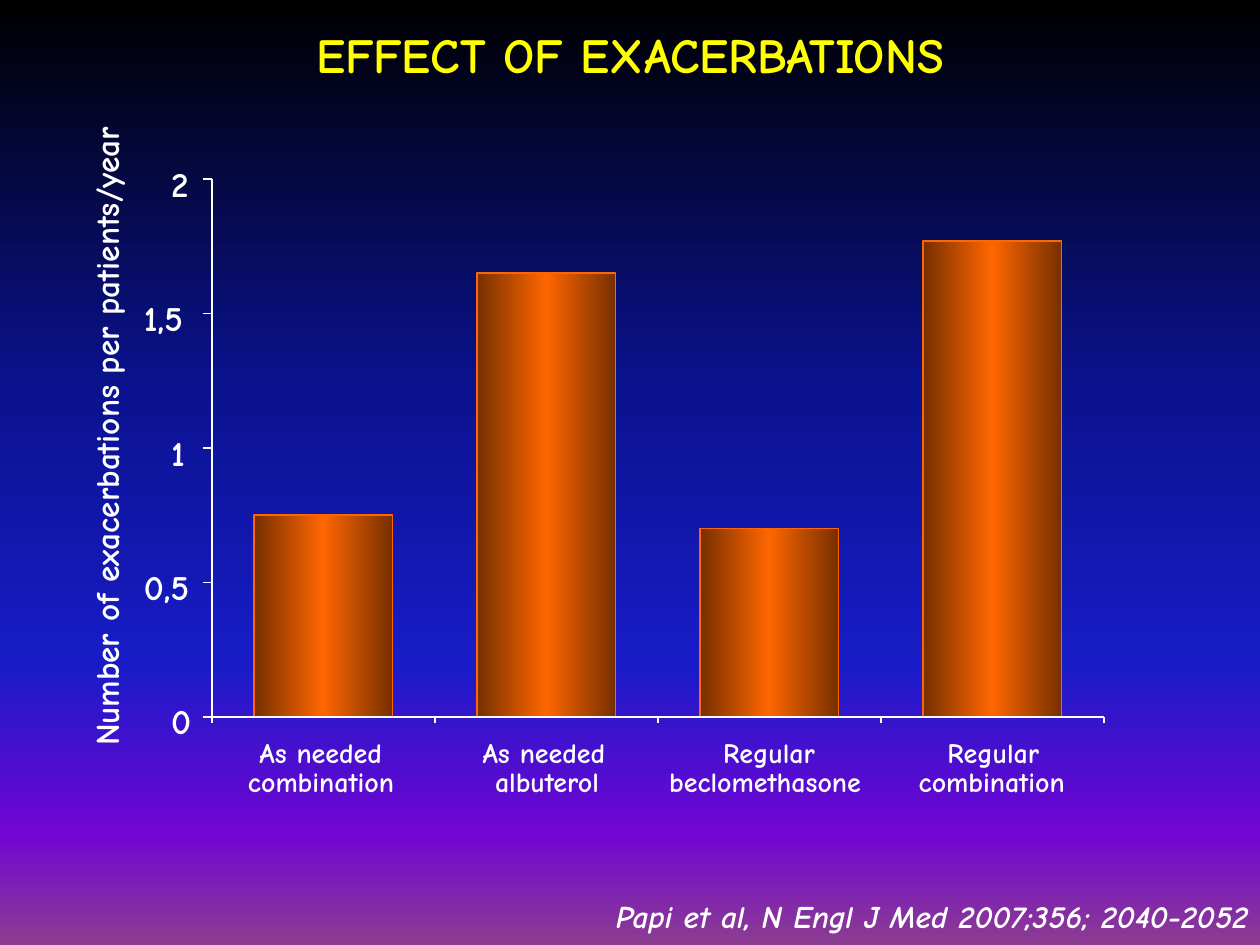
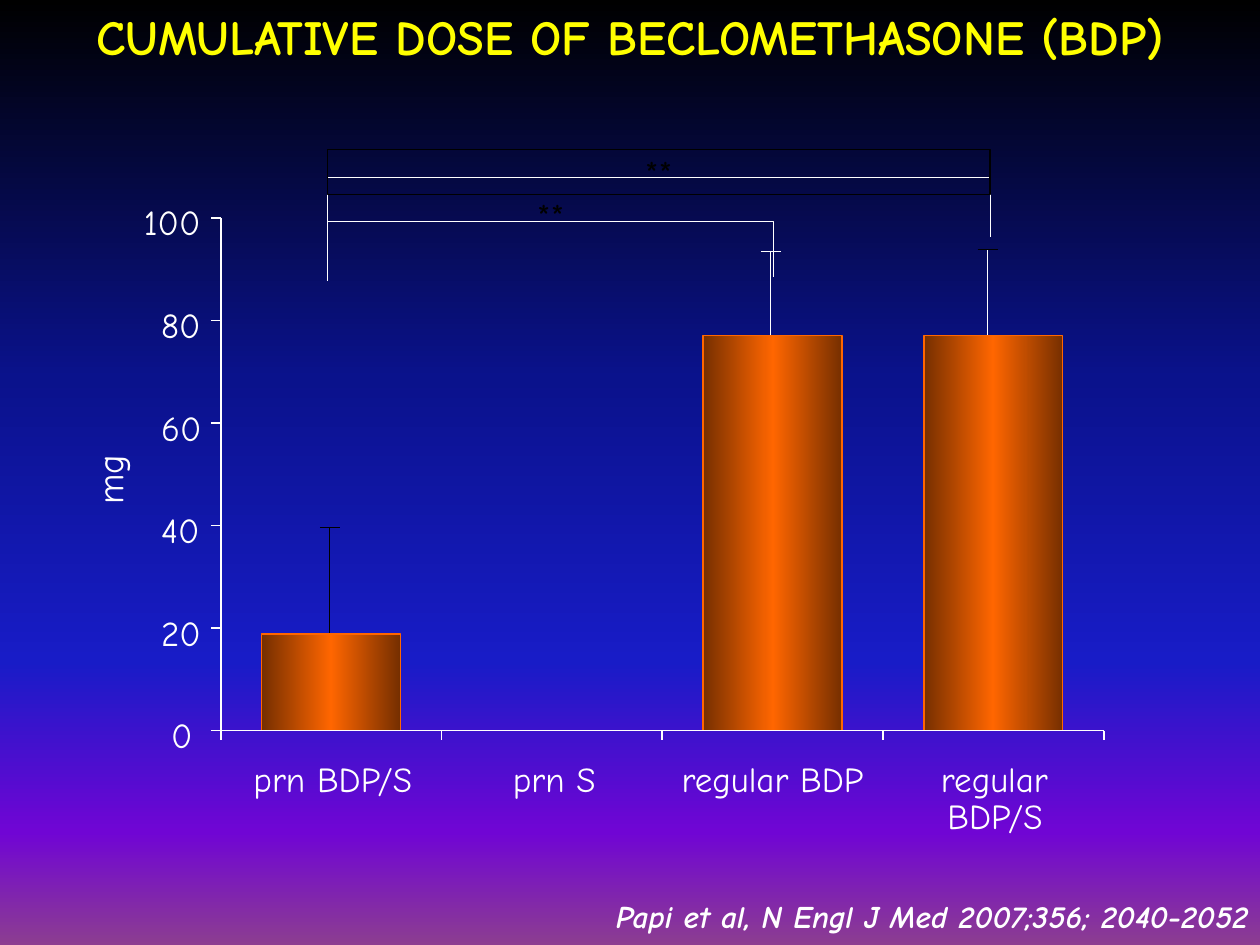
from dataclasses import dataclass

from pptx import Presentation
from pptx.dml.color import RGBColor
from pptx.enum.shapes import MSO_CONNECTOR as Connector, MSO_SHAPE as Shape
from pptx.enum.text import MSO_ANCHOR as Anchor, PP_ALIGN as Align
from pptx.oxml import parse_xml
from pptx.oxml.ns import nsdecls, qn
from pptx.oxml.xmlchemy import OxmlElement
from pptx.util import Cm, Pt


@dataclass(frozen=True)
class Theme:
    font: str = "Comic Neue"
    title: str = "FFFF00"
    text: str = "FFFFFF"
    dark: str = "000000"
    bar: str = "FF6600"
    background: tuple = ((0, "000000"), (40, "0A128C"), (70, "181CC7"),
                         (88, "7005D4"), (100, "8C3D91"))
    bar_gradient: tuple = ((0, "762F00"), (50, "FF6600"), (100, "762F00"))
    title_size: float = 28
    citation_size: float = 18
    label_size: float = 20
    small_label_size: float = 16
    axis_width: float = 0.88
    thin_width: float = 0.5
    box_width: float = 0.75


@dataclass(frozen=True)
class Box:
    left: float
    top: float
    width: float
    height: float

    def lengths(self) -> tuple:
        return Cm(self.left), Cm(self.top), Cm(self.width), Cm(self.height)


@dataclass(frozen=True)
class TextStyle:
    size: float
    color: str
    bold: bool = False
    italic: bool = False
    align: Align = Align.CENTER
    inset_x: float = 0.23
    inset_y: float = 0.13


@dataclass(frozen=True)
class LabelLine:
    text: str
    left: float
    width: float
    row: int = 0


@dataclass(frozen=True)
class BarChart:
    plot: Box
    values: tuple
    scale: tuple
    maximum: float
    value_tick: float
    category_tick: float
    categories: tuple
    category_top: float
    category_pitch: float
    category_height: float
    category_size: float
    bold: bool
    axis_title: str
    axis_title_box: Box
    axis_title_size: float


@dataclass(frozen=True)
class ErrorBar:
    x: float
    foot: float
    top: float
    stem_color: str
    cap_color: str


@dataclass(frozen=True)
class Bracket:
    right: float
    top: float
    left_foot: float
    right_foot: float
    label_top: float
    boxed: bool


THEME = Theme()
SLIDE_WIDTH, SLIDE_HEIGHT = 25.4, 19.05
BAR_WIDTH = 2.8
CAP_HALF = 0.2
BRACKET_LEFT = 6.6
BRACKET_LABEL_HEIGHT = 0.91
SCALE_LABEL_RISE, SCALE_LABEL_HEIGHT = 0.34, 0.86
SCALE_LABEL_SPANS = {1: (3.45, 0.43), 2: (3.25, 0.86), 3: (2.9, 1.19)}

TITLE = TextStyle(THEME.title_size, THEME.title, bold=True)
CITATION = TextStyle(THEME.citation_size, THEME.text, bold=True, italic=True, align=Align.RIGHT)
SIGNIFICANCE = TextStyle(THEME.label_size, THEME.dark, inset_x=0.08, inset_y=0.03)
CITATION_TEXT = "Papi et al, N Engl J Med 2007;356; 2040-2052"
CITATION_BOX = Box(0, 17.95, SLIDE_WIDTH, 1.1)

EXACERBATIONS = BarChart(
    plot=Box(4.27, 3.61, 17.98, 10.84),
    values=(0.75, 1.65, 0.7, 1.77),
    scale=("0", "0,5", "1", "1,5", "2"), maximum=2,
    value_tick=0.18, category_tick=0.13,
    categories=(
        LabelLine("As needed", 5.23, 2.87), LabelLine("combination", 5, 3.18, 1),
        LabelLine("As needed", 9.73, 2.87), LabelLine("albuterol", 9.98, 2.41, 1),
        LabelLine("Regular", 14.58, 2.03), LabelLine("beclomethasone", 13.49, 4.27, 1),
        LabelLine("Regular", 19.1, 2.03), LabelLine("combination", 18.52, 3.18, 1)),
    category_top=14.83, category_pitch=0.59, category_height=0.69,
    category_size=THEME.small_label_size, bold=True,
    axis_title="Number of exacerbations per patients/year",
    axis_title_box=Box(-4.37, 7.85, 13.84, 1.9), axis_title_size=19)
DOSE = BarChart(
    plot=Box(4.45, 4.39, 17.8, 10.34),
    values=(18.8, 0, 77, 77),
    scale=("0", "20", "40", "60", "80", "100"), maximum=100,
    value_tick=0.2, category_tick=0.18,
    categories=(
        LabelLine("prn BDP/S", 5.11, 3.51), LabelLine("prn S", 10.34, 1.8),
        LabelLine("regular BDP", 13.74, 3.94),
        LabelLine("regular", 18.97, 2.39), LabelLine("BDP/S", 19.1, 2.18, 1)),
    category_top=15.27, category_pitch=0.74, category_height=0.86,
    category_size=THEME.label_size, bold=False,
    axis_title="mg", axis_title_box=Box(0.51, 9.09, 3.38, 1.17), axis_title_size=21)
ERROR_BARS = (
    ErrorBar(6.65, 13.64, 10.64, THEME.dark, THEME.dark),
    ErrorBar(15.54, 8.08, 5.06, THEME.text, THEME.text),
    ErrorBar(19.91, 8.03, 5.03, THEME.text, THEME.dark),
)
BRACKETS = (
    Bracket(15.6, 4.47, 5.66, 5.59, 3.89, False),
    Bracket(19.96, 3.58, 4.75, 4.78, 3.02, True),
)


def rgb(color: str) -> RGBColor:
    return RGBColor.from_string(color)


def set_line(line, color: str, width: float) -> None:
    line.color.rgb = rgb(color)
    line.width = Pt(width)


def set_gradient(fill, root, stops: tuple, angle: int) -> None:
    fill.gradient()
    fill.gradient_angle = -angle % 360
    gradient = root.find(".//" + qn("a:gsLst"))
    for stop in list(gradient):
        gradient.remove(stop)
    for position, color in stops:
        gradient.append(parse_xml(
            f'<a:gs {nsdecls("a")} pos="{position * 1000}"><a:srgbClr val="{color}"/></a:gs>'))


def write_text(sp, text: str, style: TextStyle) -> None:
    tf = sp.text_frame
    tf.word_wrap = True
    tf.vertical_anchor = Anchor.TOP
    tf.margin_left = tf.margin_right = Cm(style.inset_x)
    tf.margin_top = tf.margin_bottom = Cm(style.inset_y)
    p = tf.paragraphs[0]
    p.text = text
    p.alignment = style.align
    p.font.name = THEME.font
    p.font.size = Pt(style.size)
    p.font.bold = style.bold
    p.font.italic = style.italic
    p.font.color.rgb = rgb(style.color)


def add_text(slide, box: Box, text: str, style: TextStyle, rotation: float = 0) -> None:
    sp = slide.shapes.add_textbox(*box.lengths())
    sp.rotation = rotation
    write_text(sp, text, style)


def add_rule(slide, x1: float, y1: float, x2: float, y2: float,
             color: str = THEME.text, width: float = THEME.axis_width) -> None:
    rule = slide.shapes.add_connector(Connector.STRAIGHT, Cm(x1), Cm(y1), Cm(x2), Cm(y2))
    set_line(rule.line, color, width)
    rule.element.spPr.append(OxmlElement("a:effectLst"))


def add_rectangle(slide, box: Box, line_color: str, line_width: float):
    sp = slide.shapes.add_shape(Shape.RECTANGLE, *box.lengths())
    sp.shadow.inherit = False
    sp.fill.background()
    set_line(sp.line, line_color, line_width)
    return sp


def add_bars(slide, chart: BarChart) -> None:
    plot = chart.plot
    band = plot.width / len(chart.values)
    for i, value in enumerate(chart.values):
        if value:
            height = plot.height * value / chart.maximum
            box = Box(plot.left + i * band + (band - BAR_WIDTH) / 2,
                      plot.top + plot.height - height, BAR_WIDTH, height)
            sp = add_rectangle(slide, box, THEME.bar, THEME.axis_width)
            set_gradient(sp.fill, sp.element, THEME.bar_gradient, 0)


def add_axes(slide, chart: BarChart) -> None:
    plot = chart.plot
    left, right = plot.left, plot.left + plot.width
    bottom = plot.top + plot.height
    add_rule(slide, left, plot.top, left, bottom)
    add_rule(slide, left, bottom, right, bottom)

    label_style = TextStyle(THEME.label_size, THEME.text, bold=chart.bold,
                            align=Align.LEFT, inset_x=0, inset_y=0)
    step = plot.height / (len(chart.scale) - 1)
    for i, label in enumerate(chart.scale):
        y = bottom - i * step
        add_rule(slide, left - chart.value_tick, y, left, y)
        label_left, label_width = SCALE_LABEL_SPANS[len(label)]
        add_text(slide, Box(label_left, y - SCALE_LABEL_RISE, label_width, SCALE_LABEL_HEIGHT),
                 label, label_style)

    band = plot.width / len(chart.values)
    for i in range(len(chart.values) + 1):
        x = left + i * band
        add_rule(slide, x, bottom + chart.category_tick, x, bottom)

    category_style = TextStyle(chart.category_size, THEME.text, bold=chart.bold,
                               align=Align.LEFT, inset_x=0, inset_y=0)
    for line in chart.categories:
        top = chart.category_top + line.row * chart.category_pitch
        add_text(slide, Box(line.left, top, line.width, chart.category_height),
                 line.text, category_style)

    title_style = TextStyle(chart.axis_title_size, THEME.text, bold=chart.bold, inset_x=0.28)
    add_text(slide, chart.axis_title_box, chart.axis_title, title_style, rotation=270)


def add_error_bar(slide, bar: ErrorBar) -> None:
    add_rule(slide, bar.x, bar.foot, bar.x, bar.top, bar.stem_color, THEME.thin_width)
    add_rule(slide, bar.x - CAP_HALF, bar.top, bar.x + CAP_HALF, bar.top,
             bar.cap_color, THEME.thin_width)


def add_bracket(slide, bracket: Bracket) -> None:
    corners = ((BRACKET_LEFT, bracket.top), (bracket.right, bracket.top),
               (bracket.right, bracket.right_foot))
    builder = slide.shapes.build_freeform(Cm(BRACKET_LEFT), Cm(bracket.left_foot))
    builder.add_line_segments([(Cm(x), Cm(y)) for x, y in corners], close=False)
    sp = builder.convert_to_shape()
    sp.shadow.inherit = False
    sp.fill.background()
    set_line(sp.line, THEME.text, THEME.thin_width)

    box = Box(BRACKET_LEFT, bracket.label_top, bracket.right - BRACKET_LEFT,
              BRACKET_LABEL_HEIGHT)
    if bracket.boxed:
        write_text(add_rectangle(slide, box, THEME.dark, THEME.box_width), "**", SIGNIFICANCE)
    else:
        add_text(slide, box, "**", SIGNIFICANCE)


def add_chart_slide(prs, title: str, title_box: Box, chart: BarChart,
                    error_bars: tuple = (), brackets: tuple = ()) -> None:
    slide = prs.slides.add_slide(prs.slide_layouts[6])
    for bar in error_bars:
        add_error_bar(slide, bar)
    add_bars(slide, chart)
    add_axes(slide, chart)
    for bracket in brackets:
        add_bracket(slide, bracket)
    add_text(slide, title_box, title, TITLE)
    add_text(slide, CITATION_BOX, CITATION_TEXT, CITATION)


def main() -> None:
    prs = Presentation()
    prs.slide_width, prs.slide_height = Cm(SLIDE_WIDTH), Cm(SLIDE_HEIGHT)
    master = prs.slide_master
    set_gradient(master.background.fill, master.element, THEME.background, 90)
    add_chart_slide(prs, "EFFECT OF EXACERBATIONS",
                    Box(0, 0.37, SLIDE_WIDTH, 1.42), EXACERBATIONS)
    add_chart_slide(prs, "CUMULATIVE DOSE OF BECLOMETHASONE (BDP)",
                    Box(0, 0, SLIDE_WIDTH, 2.64), DOSE, ERROR_BARS, BRACKETS)
    prs.save("out.pptx")


if __name__ == "__main__":
    main()
